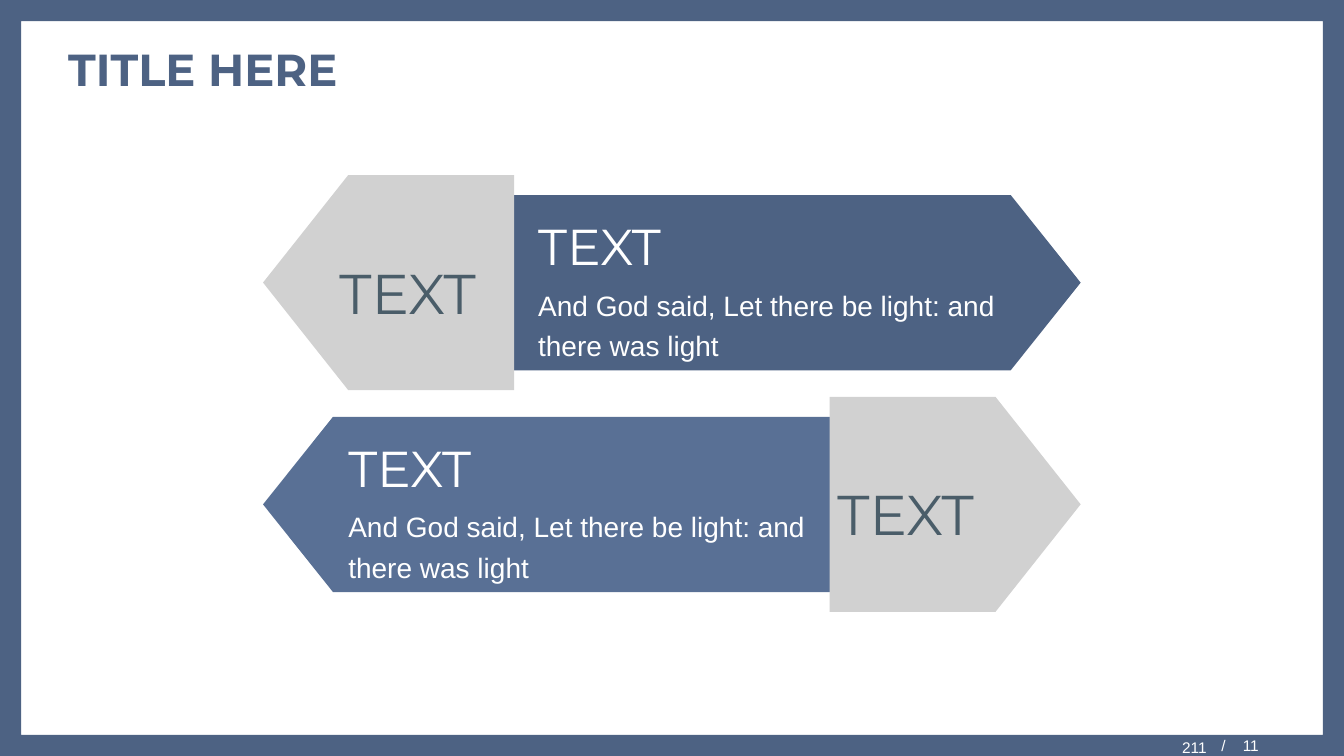
"""Build a slide with two opposed arrow banners inside a frame."""
from pptx import Presentation
from pptx import util as u
from pptx.dml.color import RGBColor
from pptx.enum import shapes, text

Pt = u.Pt
NAVY, BLUE, GREY, SLATE, WHITE = "4D6283", "597095", "D1D1D1", "4A5D69", "FFFFFF"
HEAD, BODY = "Montserrat", "Arial"
MID, TOP = text.MSO_ANCHOR.MIDDLE, text.MSO_ANCHOR.TOP
LEFT, RIGHT = text.PP_ALIGN.LEFT, text.PP_ALIGN.RIGHT


def draw(home, kind, box, hue, adj, flip=False):
    shape = home.add_shape(kind, *map(Pt, box))
    shape.shadow.inherit = False
    shape.fill.solid()
    shape.fill.fore_color.rgb = RGBColor.from_string(hue)
    shape.line.fill.background()
    shape.adjustments[0] = adj
    if flip:
        shape._element.spPr.xfrm.set("flipH", "1")
    return shape


def write(shape, lines, anchor=MID, align=LEFT, indent=0, loose=False):
    frame = shape.text_frame
    frame.word_wrap = True
    frame.vertical_anchor = anchor
    for i, (words, size, face, hue, bold) in enumerate(lines):
        para = frame.paragraphs[0] if i == 0 else frame.add_paragraph()
        para.alignment = align
        if loose:
            form = {"line_spacing": 1.2, "space_before": Pt(2), "space_after": Pt(2)}
            for key, val in form.items():
                setattr(para, key, val)
        if indent:
            para._p.get_or_add_pPr().set("marL", str(Pt(indent)))
        run = para.add_run()
        run.text = words
        for key, val in {"size": Pt(size), "name": face, "bold": bold}.items():
            setattr(run.font, key, val)
        run.font.color.rgb = RGBColor.from_string(hue)


deck = Presentation()
deck.slide_width, deck.slide_height = Pt(960), Pt(540)
slide = deck.slides.add_slide(deck.slide_layouts[6])
draw(slide.shapes, shapes.MSO_SHAPE.FRAME, (0, 0, 960, 540), NAVY, 0.028)

title = slide.shapes.add_textbox(*map(Pt, (41.6, 20.2, 877, 57)))
write(title, [("TITLE HERE", 32, HEAD, NAVY, True)])

copy = [
    ("TEXT", 36, HEAD, WHITE, False),
    ("And God said, Let there be light: and there was light", 20, BODY, WHITE, False),
]
plate = shapes.MSO_SHAPE.PENTAGON
rows = [
    (NAVY, 348.5, 187.9, 235.4, False),
    (BLUE, 187.9, 592.6, 591.1, True),
]
for i, (hue, bar, tag, label, flip) in enumerate(rows):
    top = 125.1 + i * 158.4
    group = slide.shapes.add_group_shape().shapes
    banner = draw(group, plate, (bar, top + 14.2, 423.4, 125.2), hue, 0.399, flip)
    write(banner, copy, indent=28.8, loose=True)
    draw(group, plate, (tag, top, 179.3, 153.5), GREY, 0.396, not flip)
    name = group.add_textbox(*map(Pt, (label, top + 46.2, 133.2, 65.5)))
    write(name, [("TEXT", 40, HEAD, SLATE, False)], TOP, loose=True)

marks = [
    ("211", (682.6, 527, 186.4, 13), RIGHT),
    ("/", (865.4, 525.6, 22, 13), LEFT),
    ("11", (880.6, 525.6, 60, 13), LEFT),
]
for words, box, align in marks:
    mark = slide.shapes.add_textbox(*map(Pt, box))
    mark.text_frame.margin_top = mark.text_frame.margin_bottom = 0
    write(mark, [(words, 11, BODY, WHITE, False)], align=align)

deck.save("out.pptx")
